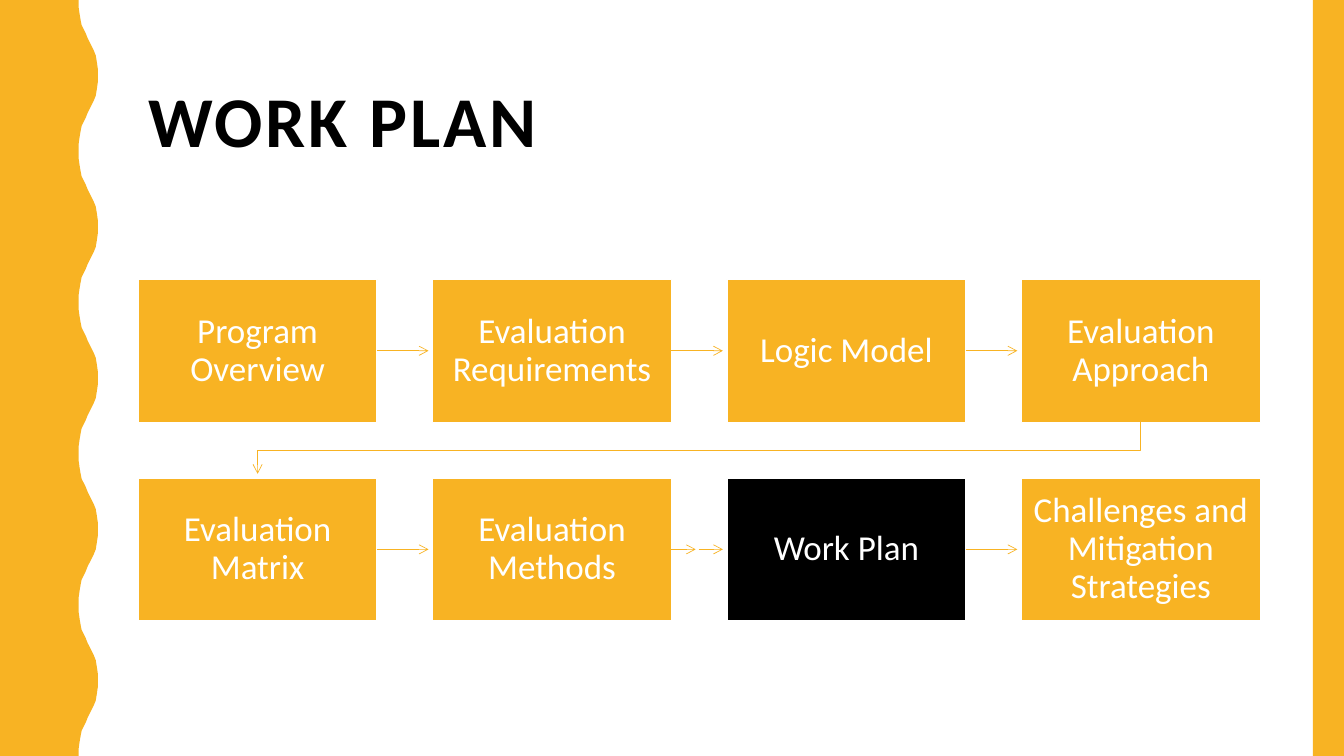
from pptx import Presentation
from pptx.dml.color import RGBColor
from pptx.enum.shapes import MSO_CONNECTOR, MSO_SHAPE
from pptx.enum.text import MSO_ANCHOR, MSO_AUTO_SIZE, PP_ALIGN
from pptx.oxml.ns import qn
from pptx.util import Inches, Pt
from lxml import etree

TITLE = "WORK PLAN"
STEPS = [
    ["Program Overview", "Evaluation Requirements", "Logic Model", "Evaluation Approach"],
    ["Evaluation Matrix", "Evaluation Methods", "Work Plan",
     "Challenges and Mitigation Strategies"],
]
CURRENT = "Work Plan"
SPLIT_AFTER = "Evaluation Methods"
COLORS = {"gold": "F8B323", "black": "000000", "white": "FFFFFF"}
FONT = "Calibri"

LEFT, TOP = 1.37, 2.77
BOX_W, BOX_H = 2.37, 1.42
STEP_X, STEP_Y = 2.92, 1.97
ARROW_GAP = 0.04
SPLIT_GAP = 0.03

WAVE_PERIOD, WAVE_COUNT = 1.5, 5
HALF_WAVE = [
    (0.78, 0), (0.78, 0.07), (0.79, 0.14), (0.8, 0.2), (0.81, 0.25),
    (0.83, 0.29), (0.85, 0.33), (0.87, 0.38), (0.89, 0.42), (0.91, 0.46),
    (0.93, 0.5), (0.95, 0.55), (0.96, 0.61), (0.97, 0.68), (0.97, 0.75),
]


def color(name):
    return RGBColor.from_string(COLORS[name])


def write(tf, text, size, fill, bold=False, align=PP_ALIGN.LEFT, inset=None, spacing=None):
    tf.word_wrap = True
    tf.auto_size = MSO_AUTO_SIZE.NONE
    tf.vertical_anchor = MSO_ANCHOR.MIDDLE
    if inset is not None:
        tf.margin_left = tf.margin_right = tf.margin_top = tf.margin_bottom = Inches(inset)
    p = tf.paragraphs[0]
    p.alignment = align
    p.line_spacing = 0.9
    r = p.add_run()
    r.text = text
    r.font.name = FONT
    r.font.size = Pt(size)
    r.font.bold = bold
    r.font.color.rgb = color(fill)
    if spacing:
        r._r.get_or_add_rPr().set("spc", str(spacing * 100))


def add_rect(x, y, w, h, fill, border=None):
    sp = s.shapes.add_shape(MSO_SHAPE.RECTANGLE, Inches(x), Inches(y), Inches(w), Inches(h))
    sp.shadow.inherit = False
    sp.fill.solid()
    sp.fill.fore_color.rgb = color(fill)
    if border:
        sp.line.color.rgb = color(border)
        sp.line.width = Pt(1)
    else:
        sp.line.fill.background()
    return sp


def add_path(points, close):
    points = [(Inches(x), Inches(y)) for x, y in points]
    fb = s.shapes.build_freeform(*points[0])
    fb.add_line_segments(points[1:], close=close)
    sp = fb.convert_to_shape()
    sp.shadow.inherit = False
    return sp


def style_arrow(line):
    line.color.rgb = color("gold")
    line.width = Pt(0.5)
    etree.SubElement(line._get_or_add_ln(), qn("a:tailEnd"), type="arrow")


def add_arrow(x1, x2, y, source=None):
    c = s.shapes.add_connector(
        MSO_CONNECTOR.STRAIGHT, Inches(x1), Inches(y), Inches(x2), Inches(y))
    if source is not None:
        c.begin_connect(source, 3)
    style_arrow(c.line)
    etree.SubElement(c._element.spPr, qn("a:effectLst"))


prs = Presentation()
prs.slide_width, prs.slide_height = Inches(13.33), Inches(7.5)
s = prs.slides.add_slide(prs.slide_layouts[5])
s.background.fill.solid()
s.background.fill.fore_color.rgb = color("white")

title = s.shapes.title
title.left, title.top = Inches(LEFT), Inches(0.42)
title.width, title.height = Inches(11.13), Inches(1.63)
write(title.text_frame, TITLE, 51, "black", bold=True, spacing=2)

wave = HALF_WAVE + [(x, WAVE_PERIOD - y) for x, y in HALF_WAVE[-2::-1]]
edge = [(x, y + i * WAVE_PERIOD) for i in range(WAVE_COUNT) for x, y in wave]
band = add_path([(0, 0)] + edge + [(0, 7.5)], close=True)
band.fill.solid()
band.fill.fore_color.rgb = color("gold")
band.line.fill.background()
add_rect(13.02, 0, 0.31, 7.5, "gold")

for row, steps in enumerate(STEPS):
    y = TOP + row * STEP_Y
    for col, step in enumerate(steps):
        x = LEFT + col * STEP_X
        box = add_rect(x, y, BOX_W, BOX_H, "black" if step == CURRENT else "gold", "white")
        write(box.text_frame, step, 25, "white", align=PP_ALIGN.CENTER, inset=0.12)
        if col == len(steps) - 1:
            continue
        start, end, mid_y = x + BOX_W, x + STEP_X - ARROW_GAP, y + BOX_H / 2
        if step == SPLIT_AFTER:
            middle = (start + end) / 2
            add_arrow(start, middle - SPLIT_GAP / 2, mid_y, box)
            add_arrow(middle + SPLIT_GAP / 2, end, mid_y)
        else:
            add_arrow(start, end, mid_y, box)

first_x = LEFT + BOX_W / 2
last_x = first_x + 3 * STEP_X
row_end, next_row = TOP + BOX_H, TOP + STEP_Y
turn_y = (row_end + next_row) / 2
turn = add_path([(last_x, row_end), (last_x, turn_y), (first_x, turn_y),
                 (first_x, next_row - ARROW_GAP)], close=False)
turn.fill.background()
style_arrow(turn.line)

prs.save("out.pptx")
